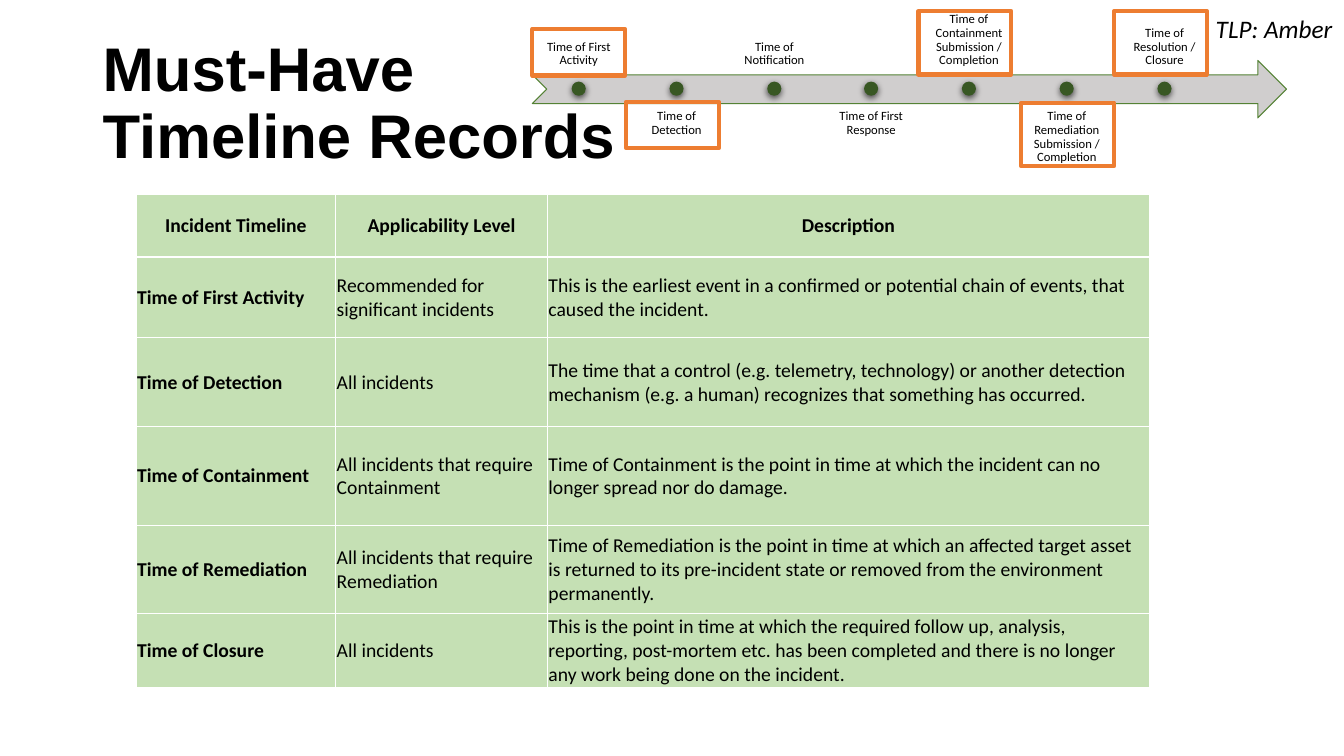
"""Build the slide of must-have incident timeline records."""

from dataclasses import dataclass
from typing import NamedTuple, Optional

from lxml import etree
from pptx import Presentation
from pptx.dml.color import RGBColor
from pptx.enum.shapes import MSO_SHAPE
from pptx.enum.text import MSO_ANCHOR, PP_ALIGN
from pptx.oxml.ns import qn
from pptx.util import Emu, Pt

ARROW = MSO_SHAPE.NOTCHED_RIGHT_ARROW
OVAL = MSO_SHAPE.OVAL
RECTANGLE = MSO_SHAPE.RECTANGLE
TOP = MSO_ANCHOR.TOP
MIDDLE = MSO_ANCHOR.MIDDLE
BOTTOM = MSO_ANCHOR.BOTTOM
LEFT = PP_ALIGN.LEFT
CENTER = PP_ALIGN.CENTER
EMU_PER_PX = 9144


@dataclass(frozen=True)
class Theme:
    text: str = "000000"
    arrow: str = "D0CECE"
    arrow_line: str = "548235"
    dot: str = "385723"
    frame: str = "ED7D31"
    cell: str = "C5E0B4"
    border: str = "FFFFFF"
    title_font: str = "Arial"
    body_font: str = "Calibri"
    title_size: int = 44
    marking_size: int = 18
    table_size: int = 14
    label_size: int = 9


class Box(NamedTuple):
    left: int
    top: int
    width: int
    height: int


class TextStyle(NamedTuple):
    font: str
    size: int
    bold: bool = False
    italic: bool = False


class Milestone(NamedTuple):
    label: str
    frame: Optional[Box] = None


class Record(NamedTuple):
    moment: str
    applicability: str
    description: str


THEME = Theme()
TITLE_STYLE = TextStyle(THEME.title_font, THEME.title_size, bold=True)
MARKING_STYLE = TextStyle(THEME.body_font, THEME.marking_size, italic=True)
LABEL_STYLE = TextStyle(THEME.body_font, THEME.label_size)
CELL_STYLE = TextStyle(THEME.body_font, THEME.table_size)
HEADING_STYLE = CELL_STYLE._replace(bold=True)

MILESTONE_SPAN = 581
MILESTONES = [
    Milestone("Time of First Activity", Box(528, 29, 92, 46)),
    Milestone("Time of Detection", Box(621, 101, 92, 46)),
    Milestone("Time of Notification"),
    Milestone("Time of First Response"),
    Milestone("Time of Containment Submission / Completion", Box(911, 11, 92, 63)),
    Milestone("Time of Remediation Submission / Completion", Box(1013, 102, 92, 63)),
    Milestone("Time of Resolution / Closure", Box(1105, 11, 92, 63)),
]

COLUMN_WIDTHS = [198, 210, 597]
ROW_HEIGHTS = [62, 80, 88, 98, 88, 73]
RECORDS = [
    Record("Incident Timeline", "Applicability Level", "Description"),
    Record("Time of First Activity", "Recommended for significant incidents",
           "This is the earliest event in a confirmed or potential chain of events, "
           "that caused the incident."),
    Record("Time of Detection", "All incidents",
           "The time that a control (e.g. telemetry, technology) or another detection "
           "mechanism (e.g. a human) recognizes that something has occurred."),
    Record("Time of Containment", "All incidents that require Containment",
           "Time of Containment is the point in time at which the incident can no "
           "longer spread nor do damage."),
    Record("Time of Remediation", "All incidents that require Remediation",
           "Time of Remediation is the point in time at which an affected target asset "
           "is returned to its pre-incident state or removed from the environment "
           "permanently."),
    Record("Time of Closure", "All incidents",
           "This is the point in time at which the required follow up, analysis, "
           "reporting, post-mortem etc. has been completed and there is no longer any "
           "work being done on the incident."),
]


def px(length: int) -> Emu:
    return Emu(length * EMU_PER_PX)


def place(box: Box) -> list[Emu]:
    return [px(length) for length in box]


def add_run(paragraph, text: str, style: TextStyle) -> None:
    run = paragraph.add_run()
    run.text = text
    run.font.name = style.font
    run.font.size = Pt(style.size)
    run.font.bold = style.bold
    run.font.italic = style.italic
    run.font.color.rgb = RGBColor.from_string(THEME.text)


def set_margins(target, left: int, top: int, right: int, bottom: int) -> None:
    target.margin_left, target.margin_top = px(left), px(top)
    target.margin_right, target.margin_bottom = px(right), px(bottom)


def add_text(slide, box: Box, lines: list[str], style: TextStyle, anchor=TOP,
             align=LEFT, wrap: bool = True, spacing: float = 1.0):
    frame = slide.shapes.add_textbox(*place(box)).text_frame
    frame.word_wrap = wrap
    frame.vertical_anchor = anchor
    paragraph = frame.paragraphs[0]
    paragraph.alignment = align
    paragraph.line_spacing = spacing
    for index, line in enumerate(lines):
        if index:
            paragraph.add_line_break()
        add_run(paragraph, line, style)
    return frame


def add_shape(slide, kind, box: Box, fill: Optional[str] = None,
              line: Optional[str] = None, line_width: float = 0):
    shape = slide.shapes.add_shape(kind, *place(box))
    shape.shadow.inherit = False
    if fill:
        shape.fill.solid()
        shape.fill.fore_color.rgb = RGBColor.from_string(fill)
    else:
        shape.fill.background()
    if line:
        shape.line.color.rgb = RGBColor.from_string(line)
        shape.line.width = Pt(line_width)
    else:
        shape.line.fill.background()
    return shape


def add_dot(slide, box: Box) -> None:
    dot = add_shape(slide, OVAL, box, THEME.dot)
    effects = dot._element.spPr.find(qn("a:effectLst"))
    shadow = etree.SubElement(effects, qn("a:outerShdw"), blurRad=str(Pt(4.5)),
                              dist=str(Pt(1.5)), dir="5400000", algn="ctr", rotWithShape="0")
    color = etree.SubElement(shadow, qn("a:srgbClr"), val=THEME.text)
    etree.SubElement(color, qn("a:alpha"), val="63000")


def add_timeline(slide) -> None:
    add_shape(slide, ARROW, Box(528, 60, 748, 57), THEME.arrow, THEME.arrow_line, 0.75)
    for index, milestone in enumerate(MILESTONES):
        left = 528 + round(index * MILESTONE_SPAN / (len(MILESTONES) - 1))
        top, anchor = (102, TOP) if index % 2 else (17, BOTTOM)
        label = add_text(slide, Box(left, top, 92, 57), [milestone.label], LABEL_STYLE,
                         anchor, CENTER, spacing=0.9)
        set_margins(label, 7, 7, 7, 7)
        add_dot(slide, Box(left + 39, 81, 14, 14))
        if milestone.frame:
            add_shape(slide, RECTANGLE, milestone.frame, line=THEME.frame, line_width=3)


def add_borders(cell) -> None:
    properties = cell._tc.get_or_add_tcPr()
    for index, side in enumerate(("lnL", "lnR", "lnT", "lnB")):
        border = etree.Element(qn(f"a:{side}"), w=str(Pt(1)))
        fill = etree.SubElement(border, qn("a:solidFill"))
        etree.SubElement(fill, qn("a:srgbClr"), val=THEME.border)
        properties.insert(index, border)


def add_records(slide) -> None:
    box = Box(135, 193, sum(COLUMN_WIDTHS), sum(ROW_HEIGHTS))
    table = slide.shapes.add_table(len(RECORDS), len(COLUMN_WIDTHS), *place(box)).table
    for column, width in zip(table.columns, COLUMN_WIDTHS):
        column.width = px(width)
    for row_index, record in enumerate(RECORDS):
        table.rows[row_index].height = px(ROW_HEIGHTS[row_index])
        for column_index, text in enumerate(record):
            cell = table.cell(row_index, column_index)
            cell.fill.solid()
            cell.fill.fore_color.rgb = RGBColor.from_string(THEME.cell)
            cell.vertical_anchor = MIDDLE
            set_margins(cell, 1, 1, 1, 0)
            add_borders(cell)
            paragraph = cell.text_frame.paragraphs[0]
            paragraph.alignment = LEFT if row_index else CENTER
            is_heading = row_index == 0 or column_index == 0
            add_run(paragraph, text, HEADING_STYLE if is_heading else CELL_STYLE)


def main() -> None:
    presentation = Presentation()
    presentation.slide_width, presentation.slide_height = px(1333), px(750)
    slide = presentation.slides.add_slide(presentation.slide_layouts[6])
    add_text(slide, Box(92, 23, 1150, 162), ["Must-Have", "Timeline Records"],
             TITLE_STYLE, MIDDLE, spacing=0.9)
    add_timeline(slide)
    add_records(slide)
    add_text(slide, Box(1196, 8, 140, 40), ["TLP: Amber"], MARKING_STYLE, wrap=False)
    presentation.save("out.pptx")


if __name__ == "__main__":
    main()
